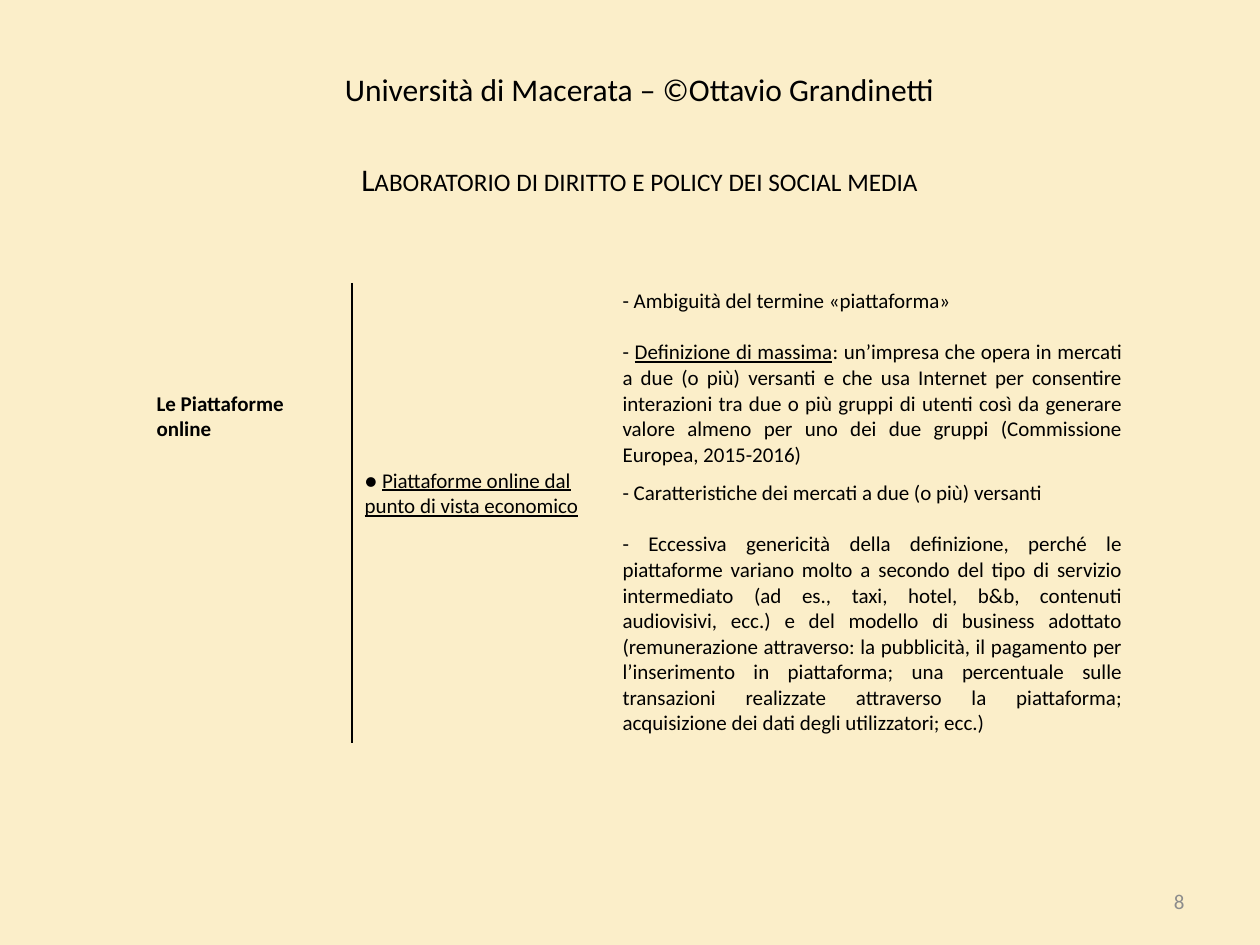
from dataclasses import dataclass

import pptx
import pptx.dml.color
import pptx.enum.text
import pptx.oxml
import pptx.oxml.ns
import pptx.util

ALIGN = pptx.enum.text.PP_ALIGN
ANCHOR = pptx.enum.text.MSO_ANCHOR
PX_PER_INCH = 126


@dataclass(frozen=True)
class Theme:
    font: str = "Calibri"
    background: str = "FBEEC9"
    ink: str = "000000"
    muted: str = "8C8C8C"
    heading: int = 18
    body: int = 12


@dataclass(frozen=True)
class Span:
    text: str
    bold: bool = False
    underline: bool = False
    small_caps: bool = False


@dataclass(frozen=True)
class CellText:
    row: int
    column: int
    spans: tuple[Span, ...]
    size: int
    align: ALIGN
    blank_lines: int = 0


THEME = Theme()
TABLE_LEFT, TABLE_TOP = 144, 66
COLUMN_WIDTHS = (208, 258, 525)
ROW_HEIGHTS = (51, 166, 51, 141, 51, 217)
BODY_ROWS = range(2, 6)
MERGES = (((0, 0), (0, 2)), ((1, 0), (1, 2)), ((2, 0), (5, 0)), ((2, 1), (5, 1)))
CELL_MARGIN = 6
LINE_HEIGHT = {THEME.heading: 38.4, THEME.body: 25.6}

CELLS = (
    CellText(0, 0, (Span("Università di Macerata – ©Ottavio Grandinetti"),),
             THEME.heading, ALIGN.CENTER),
    CellText(1, 0, (Span("Laboratorio di diritto e policy dei social media", small_caps=True),),
             THEME.heading, ALIGN.CENTER, blank_lines=1),
    CellText(2, 0, (Span("Le Piattaforme online", bold=True),),
             THEME.body, ALIGN.LEFT, blank_lines=4),
    CellText(2, 1, (Span("● "),
                    Span("Piattaforme online dal punto di vista economico", underline=True)),
             THEME.body, ALIGN.LEFT, blank_lines=7),
    CellText(2, 2, (Span("- Ambiguità del termine «piattaforma»"),),
             THEME.body, ALIGN.JUSTIFY),
    CellText(3, 2, (
        Span("- "),
        Span("Definizione di massima", underline=True),
        Span(": un’impresa che opera in mercati a due (o più) versanti e che usa Internet "
             "per consentire interazioni tra due o più gruppi di utenti così da generare "
             "valore almeno per uno dei due gruppi (Commissione Europea, 2015-2016)")),
        THEME.body, ALIGN.JUSTIFY),
    CellText(4, 2, (Span("- Caratteristiche dei mercati a due (o più) versanti"),),
             THEME.body, ALIGN.JUSTIFY),
    CellText(5, 2, (Span(
        "- Eccessiva genericità della definizione, perché le piattaforme variano molto a "
        "secondo del tipo di servizio intermediato (ad es., taxi, hotel, b&b, contenuti "
        "audiovisivi, ecc.) e del modello di business adottato (remunerazione attraverso: "
        "la pubblicità, il pagamento per l’inserimento in piattaforma; una percentuale "
        "sulle transazioni realizzate attraverso la piattaforma; acquisizione dei dati "
        "degli utilizzatori; ecc.)"),),
        THEME.body, ALIGN.JUSTIFY),
)


def px(length: float) -> pptx.util.Emu:
    return pptx.util.Emu(round(length * 914400 / PX_PER_INCH))


def write_text(frame, spans: tuple[Span, ...], *, size: int, align: ALIGN,
               color: str = THEME.ink) -> None:
    para = frame.paragraphs[0]
    para.alignment = align
    for span in spans:
        run = para.add_run()
        run.text = span.text
        font = run.font
        font.name, font.size = THEME.font, pptx.util.Pt(size)
        font.bold, font.underline = span.bold, span.underline
        font.color.rgb = pptx.dml.color.RGBColor.from_string(color)
        if span.small_caps:
            run._r.get_or_add_rPr().set("cap", "small")


def style_cell(cell, lined_side: str) -> None:
    """Clear the fill and every border except the lined side."""
    properties = cell._tc.get_or_add_tcPr()
    for side in "LRTB":
        paint = (f'<a:solidFill><a:srgbClr val="{THEME.ink}"/></a:solidFill>'
                 if side == lined_side else "<a:noFill/>")
        properties.append(pptx.oxml.parse_xml(
            f'<a:ln{side} {pptx.oxml.ns.nsdecls("a")} w="12700">{paint}</a:ln{side}>'))
    cell.fill.background()


def add_outline_table(page) -> None:
    frame = page.shapes.add_table(
        len(ROW_HEIGHTS), len(COLUMN_WIDTHS), px(TABLE_LEFT), px(TABLE_TOP),
        px(sum(COLUMN_WIDTHS)), px(sum(ROW_HEIGHTS)))
    table = frame.table
    table.first_row = table.horz_banding = False
    # The built-in "No Style, No Grid" table style
    style_id = table._tbl.tblPr.find(pptx.oxml.ns.qn("a:tableStyleId"))
    style_id.text = "{2D5ABB26-0587-4C30-8999-92F81FD0307C}"
    for column, width in zip(table.columns, COLUMN_WIDTHS):
        column.width = px(width)
    for row, height in zip(table.rows, ROW_HEIGHTS):
        row.height = px(height)
    for row in range(len(ROW_HEIGHTS)):
        for column in range(len(COLUMN_WIDTHS)):
            lined_side = {0: "R", 1: "L"}.get(column, "") if row in BODY_ROWS else ""
            style_cell(table.cell(row, column), lined_side)
    for first, last in MERGES:
        table.cell(*first).merge(table.cell(*last))
    for item in CELLS:
        cell = table.cell(item.row, item.column)
        cell.margin_top = px(CELL_MARGIN + item.blank_lines * LINE_HEIGHT[item.size])
        cell.margin_bottom = px(CELL_MARGIN)
        write_text(cell.text_frame, item.spans, size=item.size, align=item.align)


def add_page_number(page, number: str) -> None:
    box = page.shapes.add_textbox(px(903), px(876), px(294), px(50))
    box.text_frame.word_wrap = True
    box.text_frame.vertical_anchor = ANCHOR.MIDDLE
    write_text(box.text_frame, (Span(number),), size=THEME.body,
               align=ALIGN.RIGHT, color=THEME.muted)


def main() -> None:
    deck = pptx.Presentation()
    deck.slide_width, deck.slide_height = px(1260), px(945)
    page = deck.slides.add_slide(deck.slide_layouts[6])
    fill = page.background.fill
    fill.solid()
    fill.fore_color.rgb = pptx.dml.color.RGBColor.from_string(THEME.background)
    add_page_number(page, "8")
    add_outline_table(page)
    deck.save("out.pptx")


if __name__ == "__main__":
    main()
